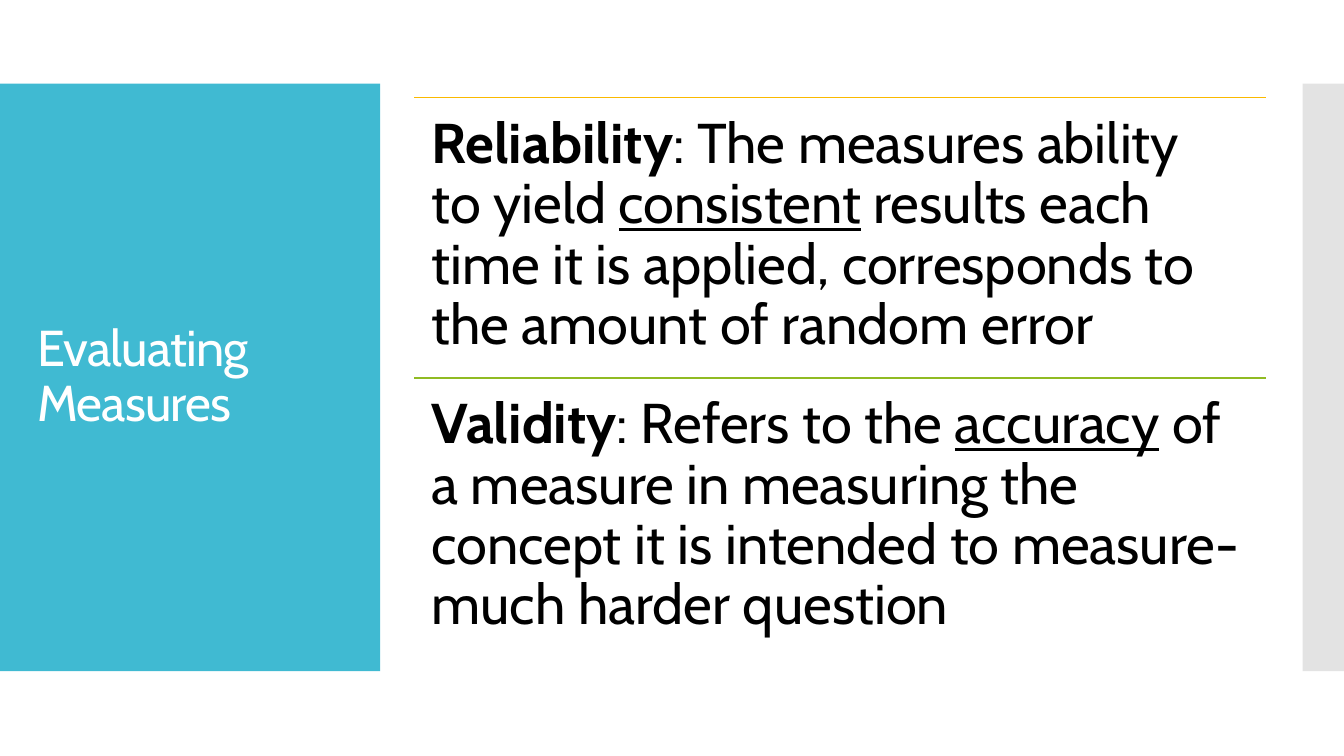
"""Build the Evaluating Measures slide with its reliability and validity definitions."""
from dataclasses import dataclass

from lxml import etree
from pptx import Presentation
from pptx.dml.color import RGBColor
from pptx.enum.shapes import MSO_CONNECTOR, MSO_SHAPE
from pptx.enum.text import MSO_ANCHOR, MSO_AUTO_SIZE, PP_ALIGN
from pptx.oxml.ns import qn
from pptx.slide import Slide
from pptx.text.text import TextFrame
from pptx.util import Inches, Pt

RECTANGLE = MSO_SHAPE.RECTANGLE
STRAIGHT = MSO_CONNECTOR.STRAIGHT
TOP, MIDDLE = MSO_ANCHOR.TOP, MSO_ANCHOR.MIDDLE
LEFT = PP_ALIGN.LEFT
NO_AUTOFIT = MSO_AUTO_SIZE.NONE

TEAL = RGBColor(0x40, 0xBA, 0xD2)
GRAY = RGBColor(0xC8, 0xC8, 0xC8)
WHITE = RGBColor(0xFF, 0xFF, 0xFF)
BLACK = RGBColor(0x00, 0x00, 0x00)
AMBER = RGBColor(0xFA, 0xB9, 0x00)
GREEN = RGBColor(0x90, 0xBB, 0x23)

FONT = "Cabin"
NBSP = chr(160)
BAND_TOP, BAND_HEIGHT = 0.83, 5.83
COLUMN_LEFT, COLUMN_TOP, COLUMN_WIDTH = 4.11, 0.97, 8.45
ROW_HEIGHT = 2.78


@dataclass(frozen=True)
class Panel:
    left: float
    width: float
    color: RGBColor
    opacity: int = 100


@dataclass(frozen=True)
class Span:
    text: str
    bold: bool = False
    underline: bool = False


@dataclass(frozen=True)
class Definition:
    rule_color: RGBColor
    spans: tuple[Span, ...]


PANELS = (Panel(0, 3.77, TEAL), Panel(12.92, 0.42, GRAY, opacity=50))

DEFINITIONS = (
    Definition(AMBER, (
        Span("Reliability", bold=True),
        Span(f": The measures ability to{NBSP}yield{NBSP}"),
        Span("consistent", underline=True),
        Span(f"{NBSP}results each time it is{NBSP}applied, "
             f"corresponds to the amount of{NBSP}random error"),
    )),
    Definition(GREEN, (
        Span("Validity", bold=True),
        Span(f": Refers to the{NBSP}"),
        Span("accuracy", underline=True),
        Span(f"{NBSP}of a{NBSP}measure in measuring the concept it is{NBSP}intended "
             f"to measure-much harder{NBSP}question"),
    )),
)


def write_text(frame: TextFrame, spans: tuple[Span, ...], *, size: float, color: RGBColor,
               anchor: MSO_ANCHOR, spacing: float = 0) -> None:
    """Fill a text frame with one left-aligned paragraph of formatted spans."""
    frame.word_wrap = True
    frame.auto_size = NO_AUTOFIT
    frame.vertical_anchor = anchor
    paragraph = frame.paragraphs[0]
    paragraph.alignment = LEFT
    paragraph.line_spacing = 0.9
    for span in spans:
        run = paragraph.add_run()
        run.text = span.text
        font = run.font
        font.name, font.size = FONT, Pt(size)
        font.bold, font.underline = span.bold, span.underline
        font.color.rgb = color
        if spacing:
            font._element.set("spc", str(round(spacing * 100)))


def add_panel(slide: Slide, panel: Panel) -> None:
    """Draw a borderless side panel."""
    shape = slide.shapes.add_shape(RECTANGLE, Inches(panel.left), Inches(BAND_TOP),
                                   Inches(panel.width), Inches(BAND_HEIGHT))
    shape.shadow.inherit = False
    shape.fill.solid()
    shape.fill.fore_color.rgb = panel.color
    shape.line.fill.background()
    if panel.opacity < 100:
        color = shape.element.spPr.find(f"{qn('a:solidFill')}/{qn('a:srgbClr')}")
        etree.SubElement(color, qn("a:alpha"), val=str(panel.opacity * 1000))


def add_definition(slide: Slide, definition: Definition, top: float) -> None:
    """Draw a rule with its definition below."""
    left, width = Inches(COLUMN_LEFT), Inches(COLUMN_WIDTH)
    rule = slide.shapes.add_connector(STRAIGHT, left, Inches(top), left + width, Inches(top))
    rule.line.color.rgb = definition.rule_color
    rule.line.width = Pt(0.85)
    etree.SubElement(rule.element.spPr, qn("a:effectLst"))

    frame = slide.shapes.add_textbox(left, Inches(top), width, Inches(ROW_HEIGHT)).text_frame
    frame.margin_left = frame.margin_right = Inches(0.17)
    frame.margin_top = frame.margin_bottom = Inches(0.17)
    write_text(frame, definition.spans, size=40, color=BLACK, anchor=TOP)


def place_title(slide: Slide) -> None:
    """Format the title placeholder and bring it in front of the panels."""
    title = slide.shapes.title
    title.left, title.top = Inches(0.27), Inches(1.23)
    title.width, title.height = Inches(3.22), Inches(5.03)
    write_text(title.text_frame, (Span("Evaluating Measures"),), size=36, color=WHITE,
               anchor=MIDDLE, spacing=-0.6)
    title.element.getparent().append(title.element)


def main() -> None:
    """Create and save the presentation."""
    presentation = Presentation()
    presentation.slide_width, presentation.slide_height = Inches(13.33), Inches(7.5)
    slide = presentation.slides.add_slide(presentation.slide_layouts.get_by_name("Title Only"))
    for panel in PANELS:
        add_panel(slide, panel)
    place_title(slide)
    for row, definition in enumerate(DEFINITIONS):
        add_definition(slide, definition, COLUMN_TOP + row * ROW_HEIGHT)
    presentation.save("out.pptx")


if __name__ == "__main__":
    main()
